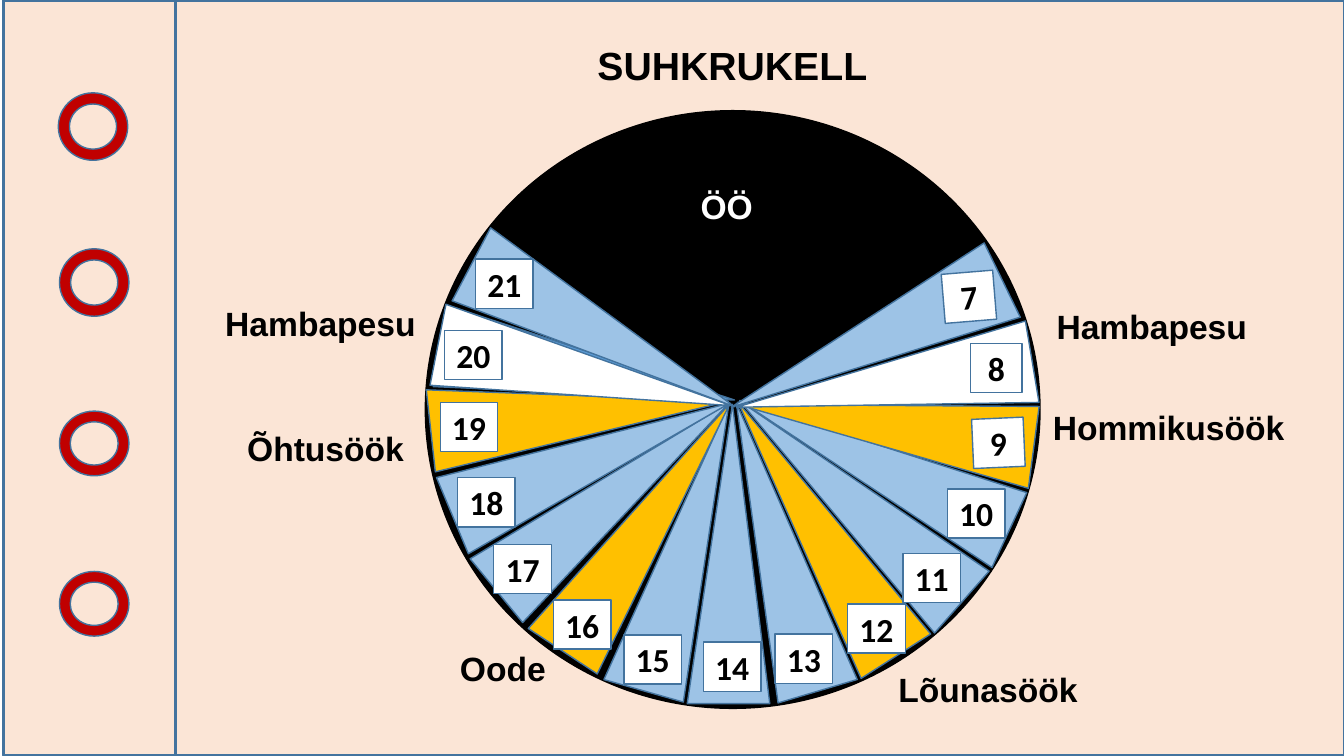
import math
import pptx
import pptx.util
import pptx.dml.color
import pptx.enum.shapes
import pptx.enum.text

Cm, Pt = pptx.util.Cm, pptx.util.Pt
KIND = pptx.enum.shapes.MSO_SHAPE
ALIGN = pptx.enum.text.PP_ALIGN
ANCHOR = pptx.enum.text.MSO_ANCHOR

PEACH, EDGE, RED = "FBE5D6", "43739E", "C00000"
BLACK, WHITE = "000000", "FFFFFF"
BLUE, DEEP, GOLD = "9DC3E6", "5B9BD5", "FFC000"

# Content, lengths in cm
TITLE = ("SUHKRUKELL", 10.29, 0.91, 16.33, 1.45)
MARGIN = (0.08, 0, 4.42, 19.05)
PAGE = (4.42, 0, 29.46, 19.05)
DIAL = (10.72, 2.79, 15.49, 15.06)
RINGS = [  # left, top, height
    (1.47, 2.34, 1.7), (1.5, 6.27, 1.7), (1.5, 10.36, 1.63), (1.5, 14.4, 1.63),
]
LABELS = [  # text, left, top, width
    ("Hambapesu", 4.75, 7.52, 6.65),
    ("Õhtusöök", 4.88, 10.67, 6.65),
    ("Oode", 10.82, 16.21, 3.71),
    ("Lõunasöök", 21.74, 16.74, 6.32),
    ("Hommikusöök", 26.26, 10.13, 6.38),
    ("Hambapesu", 26.14, 7.59, 5.77),
]
NIGHT = ("ÖÖ", 16.46, 4.55, 3.71)
SLICES = [  # turn in degrees, tip x, tip y, peak, fill
    (0, 18.46, 10.19, 0.548, BLUE),
    (343.5, 18.56, 10.16, 0.548, BLUE),
    (327.4, 18.6, 10.13, 0.548, GOLD),
    (311.4, 18.65, 10.11, 0.548, BLUE),
    (294.9, 18.64, 10.09, 0.548, BLUE),
    (277.5, 18.59, 10.19, 0.548, GOLD),
    (260.5, 18.56, 10.26, 0.548, WHITE),
    (244.1, 18.43, 10.26, 0.548, BLUE),
    (15.8, 18.37, 10.18, 0.548, BLUE),
    (33.4, 18.4, 10.16, 0.539, GOLD),
    (50.5, 18.38, 10.15, 0.539, BLUE),
    (67.3, 18.39, 10.16, 0.539, BLUE),
    (83.7, 18.36, 10.11, 0.539, GOLD),
    (99.8, 18.51, 10.08, 0.539, DEEP),
    (117.8, 18.51, 10.25, 0.539, BLUE),
    (101.1, 18.42, 10.22, 0.539, WHITE),
]
FIRST = 7
HOURS = [  # centre of each hour tile, from 7 to 21
    (24.42, 7.48), (25.11, 9.28), (25.16, 11.16), (24.6, 12.94), (23.48, 14.57),
    (22.09, 15.84), (20.26, 16.6), (18.45, 16.8), (16.45, 16.62), (14.67, 15.74),
    (13.17, 14.34), (12.26, 12.66), (11.82, 10.76), (11.93, 8.95), (12.71, 7.15),
]
TILT = {7: 355.3, 9: 357.5}
WIDE, LONG = 2.08, 7.54  # slice size


def tint(code):
    return pptx.dml.color.RGBColor.from_string(code)


def paint(shape, fill, line, width):
    shape.fill.solid()
    shape.fill.fore_color.rgb = tint(fill)
    shape.line.color.rgb = tint(line)
    shape.line.width = Pt(width)


def draw(kind, box, fill, line=EDGE, width=1, turn=0):
    shape = slide.shapes.add_shape(kind, *map(Cm, box))
    shape.shadow.inherit = False
    paint(shape, fill, line, width)
    shape.rotation = turn
    return shape


def write(shape, text, size=24, font="Arial", color=BLACK, anchor=ANCHOR.TOP):
    frame = shape.text_frame
    frame.text = text
    frame.word_wrap = True
    frame.vertical_anchor = anchor
    line = frame.paragraphs[0]
    line.alignment = ALIGN.CENTER
    face = line.runs[0].font
    face.name, face.size, face.bold = font, Pt(size), True
    face.color.rgb = tint(color)


def label(item, fill, color):
    text, left, top, width = item
    shape = draw(KIND.RECTANGLE, (left, top, width, 1.27), fill, fill, 0.75)
    write(shape, text, color=color)


deck = pptx.Presentation()
deck.slide_width, deck.slide_height = Cm(33.87), Cm(19.05)
slide = deck.slides.add_slide(deck.slide_layouts[5])

# Binder margin, rings and page
draw(KIND.RECTANGLE, MARGIN, PEACH, width=2.25)
for left, top, height in RINGS:
    ring = draw(KIND.DONUT, (left, top, 1.75, height), RED)
    ring.adjustments[0] = 0.166
draw(KIND.RECTANGLE, PAGE, PEACH, width=2.25)

# Meal labels
for item in LABELS:
    label(item, PEACH, BLACK)

# Title, brought in front of the page
title = slide.shapes.title
slide.shapes.element.append(title.element)
text, *box = TITLE
title.left, title.top, title.width, title.height = map(Cm, box)
paint(title, PEACH, PEACH, 0.75)
write(title, text, size=28)

# Dial with slices, each turned about its tip
draw(KIND.OVAL, DIAL, BLACK, BLACK)
for turn, x, y, peak, fill in SLICES:
    angle = math.radians(turn)
    side, rise = (peak - 0.5) * WIDE, LONG / 2
    mid = x - side * math.cos(angle) - rise * math.sin(angle)
    low = y - side * math.sin(angle) + rise * math.cos(angle)
    box = (mid - WIDE / 2, low - rise, WIDE, LONG)
    part = draw(KIND.ISOSCELES_TRIANGLE, box, fill, turn=turn)
    part.adjustments[0] = peak
label(NIGHT, BLACK, WHITE)

# Hour tiles
for hour, (x, y) in enumerate(HOURS, FIRST):
    width, height = (1.3 if hour < 10 else 1.45), 1.24
    box = (x - width / 2, y - height / 2, width, height)
    tile = draw(KIND.RECTANGLE, box, WHITE, turn=TILT.get(hour, 0))
    write(tile, str(hour), font="Calibri", anchor=ANCHOR.MIDDLE)

deck.save("out.pptx")
